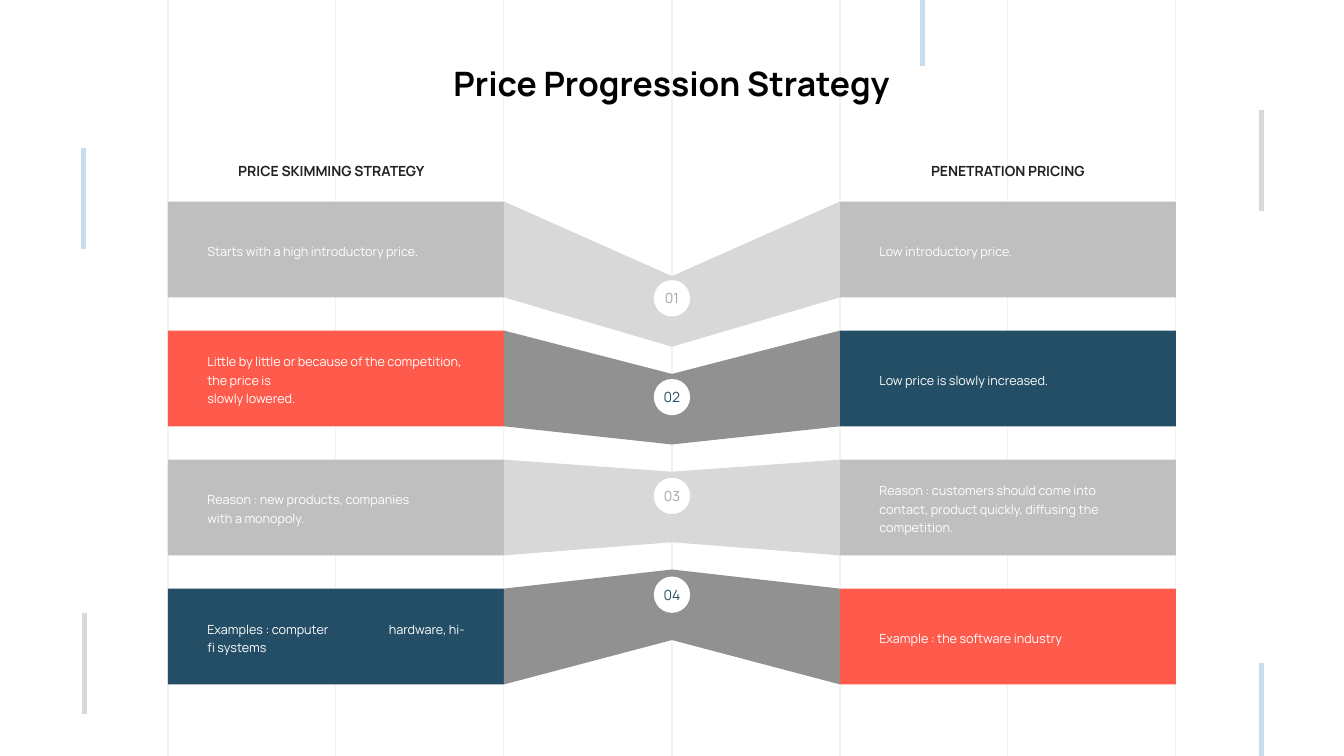
from copy import deepcopy

from lxml import etree
from pptx import Presentation
from pptx.dml.color import RGBColor
from pptx.enum.shapes import MSO_CONNECTOR, MSO_SHAPE
from pptx.enum.text import MSO_ANCHOR, PP_ALIGN
from pptx.oxml.ns import qn
from pptx.util import Inches, Pt

TITLE = "Price Progression Strategy"
HEADINGS = ["PRICE SKIMMING STRATEGY", "PENETRATION PRICING"]
GREY, RED, NAVY, WHITE = "BFBFBF", "FF5B4C", "234E65", "FFFFFF"
LIGHT_FOLD, DARK_FOLD = "D8D8D8", "919191"
LIGHT_BLUE, MUTED = "C7DDEB", "A5A5A5"

# number, number colour, fold colour, (left text, fill), (right text, fill)
ROWS = [
    ("01", MUTED, LIGHT_FOLD,
     ("Starts with a high introductory price.", GREY),
     ("Low introductory price.", GREY)),
    ("02", NAVY, DARK_FOLD,
     ("Little by little or because of the competition, the price is\nslowly lowered.", RED),
     ("Low price is slowly increased.", NAVY)),
    ("03", MUTED, LIGHT_FOLD,
     ("Reason : new products, companies\nwith a monopoly.", GREY),
     ("Reason : customers should come into contact, product quickly, "
      "diffusing the competition.", GREY)),
    ("04", NAVY, DARK_FOLD,
     ("Examples : computer\thardware, hi-fi systems", NAVY),
     ("Example : the software industry", RED)),
]
# x, top, bottom, colour
ACCENTS = [
    (0.83, 1.47, 2.47, LIGHT_BLUE),
    (0.84, 6.08, 7.08, LIGHT_FOLD),
    (9.15, 0, 0.65, LIGHT_BLUE),
    (12.51, 1.09, 2.09, LIGHT_FOLD),
    (12.51, 6.58, 7.5, LIGHT_BLUE),
]

SLIDE_WIDTH, SLIDE_HEIGHT = 13.33, 7.5
CENTRE = SLIDE_WIDTH / 2
COLUMN = SLIDE_WIDTH / 8
BAR_LEFTS = [COLUMN, 5 * COLUMN]
BAR_WIDTH, BAR_HEIGHT = 2 * COLUMN, 0.95
FOLD_OUTER = [3 * COLUMN, 5 * COLUMN]
BAR_TOP, BAR_STEP = 2.0, 1.28
FOLD_TOP, FOLD_STEP, FOLD_HEIGHT = 2.74, 0.97, 0.7
BADGE_TOP, BADGE_STEP, BADGE_SIZE = 2.78, 0.98, 0.36
HEADING_LEFTS = [1.84, 8.55]
TAB_STOP = 1.8


def color(value):
    return RGBColor.from_string(value)


def set_text(shape, text, size, text_color, bold=False, align=PP_ALIGN.LEFT,
             spacing=1.0, side_inset=0, anchor=MSO_ANCHOR.MIDDLE):
    frame = shape.text_frame
    frame_format = {
        "word_wrap": True, "vertical_anchor": anchor,
        "margin_left": Inches(side_inset), "margin_right": Inches(side_inset),
        "margin_top": 0, "margin_bottom": 0,
    }
    for name, value in frame_format.items():
        setattr(frame, name, value)
    paragraph = frame.paragraphs[0]
    paragraph.alignment = align
    paragraph.line_spacing = spacing
    if "\t" in text:
        tabs = etree.SubElement(paragraph._p.get_or_add_pPr(), qn("a:tabLst"))
        etree.SubElement(tabs, qn("a:tab"), pos=str(Inches(TAB_STOP)), algn="l")
    for index, line in enumerate(text.split("\n")):
        if index:
            paragraph.add_line_break()
        run = paragraph.add_run()
        run.text = line
        font_format = {"name": "Manrope", "size": Pt(size), "bold": bold}
        for name, value in font_format.items():
            setattr(run.font, name, value)
        run.font.color.rgb = color(text_color)
    for line_break in paragraph._p.findall(qn("a:br")):
        line_break.append(deepcopy(run._r.rPr))


def paint(shape, fill):
    shape.shadow.inherit = False
    shape.fill.solid()
    shape.fill.fore_color.rgb = color(fill)
    shape.line.fill.background()


def add_shape(slide, kind, left, top, width, height, fill):
    shape = slide.shapes.add_shape(
        kind, Inches(left), Inches(top), Inches(width), Inches(height))
    paint(shape, fill)
    return shape


def add_vertical_line(slide, x, top, bottom, line_color, width):
    line = slide.shapes.add_connector(
        MSO_CONNECTOR.STRAIGHT, Inches(x), Inches(top), Inches(x), Inches(bottom))
    line.line.color.rgb = color(line_color)
    line.line.width = Pt(width)
    etree.SubElement(line._element.spPr, qn("a:effectLst"))


def add_fold(slide, outer, bar_top, inner_top, fill):
    """Draw the slanted panel between a bar and the centre line."""
    points = [(outer, bar_top + BAR_HEIGHT), (CENTRE, inner_top + FOLD_HEIGHT),
              (CENTRE, inner_top), (outer, bar_top)]
    corners = [(Inches(x), Inches(y)) for x, y in points]
    builder = slide.shapes.build_freeform(*corners[0])
    builder.add_line_segments(corners[1:], close=True)
    paint(builder.convert_to_shape(), fill)


def add_title(slide):
    title = slide.shapes.title
    title.left, title.top = Inches(4.11), Inches(0.59)
    title.width, title.height = Inches(5.1), Inches(0.46)
    set_text(title, TITLE, 24, "000000", bold=True, align=PP_ALIGN.CENTER)
    slide.shapes._spTree.append(title._element)  # in front of the grid lines


def main():
    presentation = Presentation()
    presentation.slide_width = Inches(SLIDE_WIDTH)
    presentation.slide_height = Inches(SLIDE_HEIGHT)
    slide = presentation.slides.add_slide(presentation.slide_layouts[5])

    for column in range(1, 8):
        add_vertical_line(slide, column * COLUMN, 0, SLIDE_HEIGHT, "F2F2F2", 0.75)

    for index, (_, _, fold_color, *sides) in enumerate(ROWS):
        bar_top = BAR_TOP + index * BAR_STEP
        inner_top = FOLD_TOP + index * FOLD_STEP
        for (text, fill), left, outer in zip(sides, BAR_LEFTS, FOLD_OUTER):
            bar = add_shape(slide, MSO_SHAPE.RECTANGLE, left, bar_top,
                            BAR_WIDTH, BAR_HEIGHT, fill)
            set_text(bar, text, 9, WHITE, spacing=1.2, side_inset=0.39)
            add_fold(slide, outer, bar_top, inner_top, fold_color)

    add_title(slide)
    for heading, left in zip(HEADINGS, HEADING_LEFTS):
        box = slide.shapes.add_textbox(
            Inches(left), Inches(1.58), Inches(2.89), Inches(0.19))
        set_text(box, heading, 10, "222222", bold=True, align=PP_ALIGN.CENTER,
                 spacing=1.2, anchor=MSO_ANCHOR.TOP)

    for x, top, bottom, line_color in ACCENTS:
        add_vertical_line(slide, x, top, bottom, line_color, 4)

    for index, (number, number_color, *_) in enumerate(ROWS):
        badge = add_shape(slide, MSO_SHAPE.OVAL, CENTRE - BADGE_SIZE / 2,
                          BADGE_TOP + index * BADGE_STEP, BADGE_SIZE, BADGE_SIZE, WHITE)
        set_text(badge, number, 10, number_color, align=PP_ALIGN.CENTER)

    presentation.save("out.pptx")


if __name__ == "__main__":
    main()
